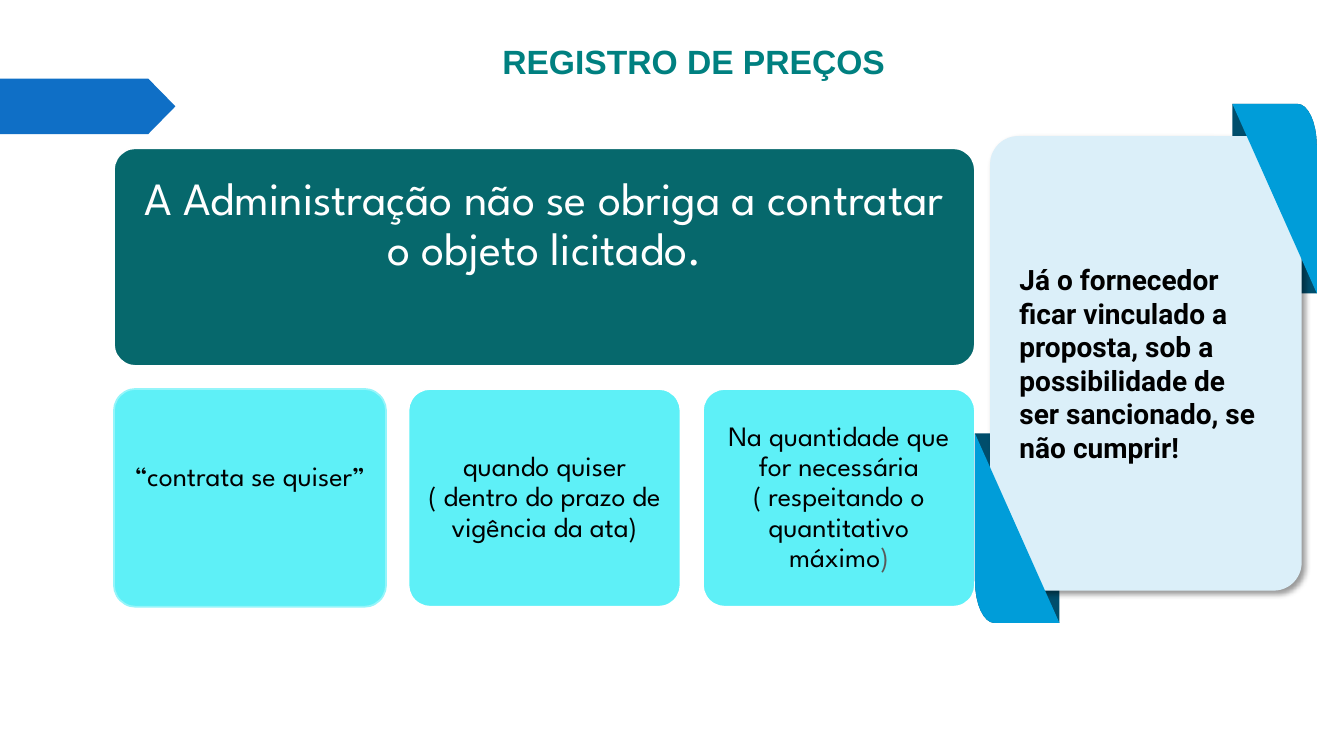
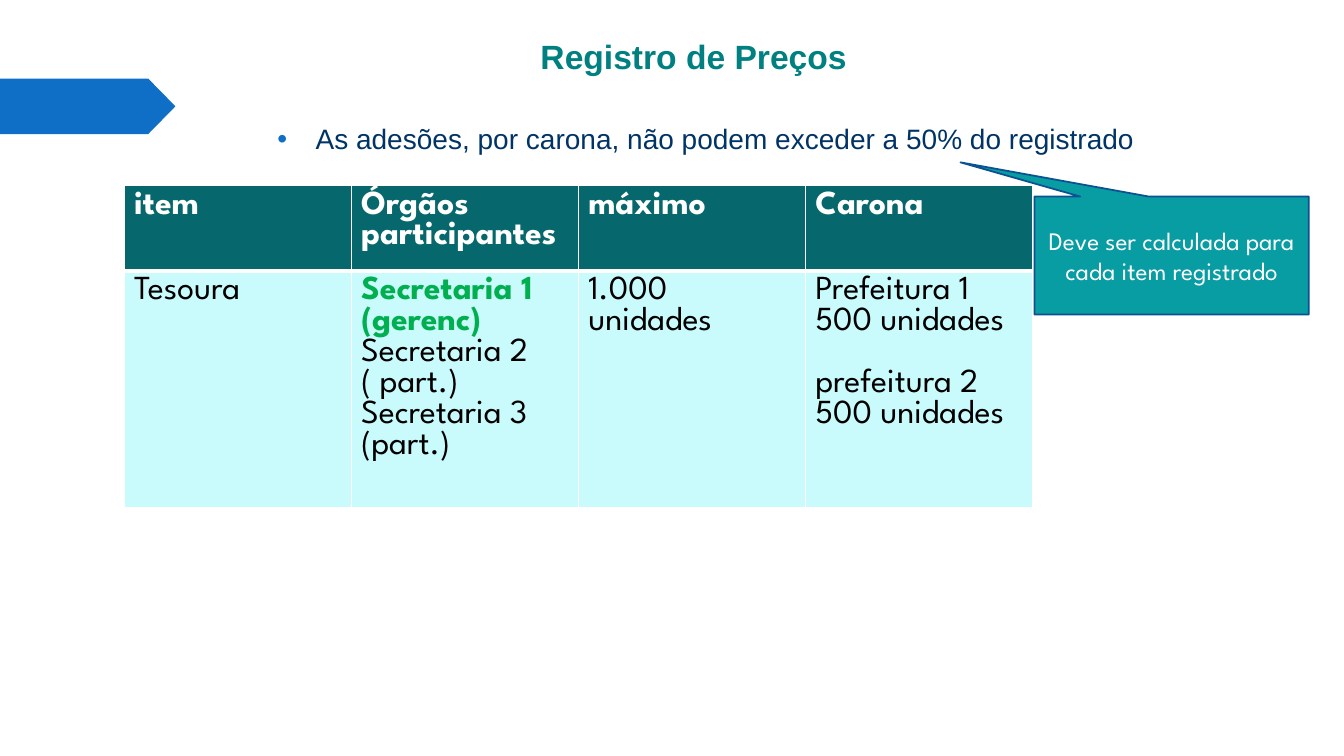
from collections import namedtuple
from math import cos, pi, sin

from lxml import etree
from pptx import Presentation
from pptx.dml.color import RGBColor
from pptx.enum.shapes import MSO_SHAPE
from pptx.enum.text import MSO_ANCHOR, PP_ALIGN
from pptx.oxml.ns import qn
from pptx.util import Inches, Pt

ROUNDED, CALLOUT, PENTAGON = (
    MSO_SHAPE.ROUNDED_RECTANGLE, MSO_SHAPE.RECTANGULAR_CALLOUT, MSO_SHAPE.PENTAGON)
MIDDLE, TOP = MSO_ANCHOR.MIDDLE, MSO_ANCHOR.TOP
CENTER, LEFT, JUSTIFY = PP_ALIGN.CENTER, PP_ALIGN.LEFT, PP_ALIGN.JUSTIFY

COLORS = {
    "white": "FFFFFF", "black": "000000", "band": "0F6FC6", "title": "008080",
    "navy": "003366", "teal": "06686C", "cyan": "5EF0F7", "cyan edge": "94F5FA",
    "pale cyan": "C9FAFC", "grey": "595959", "green": "00B050", "panel": "DBEFF9",
    "ribbon": "009DD9", "ribbon shade": "004E6C", "callout": "089CA3",
    "callout edge": "0B5292",
}
SANS, SPARTAN, ROBOTO = "Arial", "League Spartan", "Roboto"

Box = namedtuple("Box", "left top width height")
WIDTH, HEIGHT = 13.33, 7.5
BAND = Box(0, 0.78, 1.74, 0.55)
TITLE = Box(1.13, -0.12, 11.5, 1.45)
CARDS = Box(1.13, 1.47, 8.54, 4.55)
RIBBON_PANEL = Box(9.67, 1.03, 3.39, 5.15)
BULLETS = Box(2.65, 1.16, 9.75, 4.13)
TABLE = Box(1.23, 1.84, 9.01, 3.2)
NOTE = Box(10.26, 1.95, 2.72, 1.17)


def color(name):
    """Return the named palette colour."""
    return RGBColor.from_string(COLORS[name])


def emu(box):
    """Return the four lengths of a box for python-pptx."""
    return [Inches(length) for length in box]


def place(shape, box):
    """Move and size a shape to a box."""
    shape.left, shape.top, shape.width, shape.height = emu(box)


def style_font(font, name, size, ink, bold=False):
    """Set face, size, colour and weight."""
    font.name, font.size, font.bold = name, Pt(size), bold
    font.color.rgb = color(ink)


def paint(shape, fill, edge=None):
    """Give a shape a flat fill, an optional edge and no shadow."""
    shape.shadow.inherit = False
    shape.fill.solid()
    shape.fill.fore_color.rgb = color(fill)
    if edge:
        shape.line.color.rgb = color(edge)
        shape.line.width = Pt(1.25)
    else:
        shape.line.fill.background()


def add_block(page, kind, box, fill, edge=None, adjust=()):
    """Add a painted preset shape."""
    shape = page.shapes.add_shape(kind, *emu(box))
    paint(shape, fill, edge)
    for index, value in enumerate(adjust):
        shape.adjustments[index] = value
    return shape


def write(shape, text, font, align=CENTER, insets=(0.1, 0.05, 0.1, 0.05), spacing=1.0):
    """Write one wrapped paragraph in the middle of a shape."""
    frame = shape.text_frame
    frame.word_wrap = True
    frame.vertical_anchor = MIDDLE
    (frame.margin_left, frame.margin_top,
     frame.margin_right, frame.margin_bottom) = emu(insets)
    para = frame.paragraphs[0]
    para.text = text
    para.alignment = align
    para.line_spacing = spacing
    style_font(para.font, *font)
    return para


def add_band(deck, page):
    """Draw the side band and hand it to the slide master."""
    band = add_block(page, PENTAGON, BAND, "band", adjust=[0.49])
    band.element.xpath(".//p:cNvPr")[0].set("id", "90")
    deck.slide_master.shapes.element.append(band.element)


def set_title(page, text, bottom=0.05):
    """Place and style the title placeholder."""
    title = page.shapes.title
    place(title, TITLE)
    write(title, text, (SANS, 24, "title", True), insets=(0.1, 0.05, 0.1, bottom))


def add_cards(page, box):
    """Draw a wide heading card over three equal cards."""
    card_height, card_width = box.height * 0.475, box.width * 0.316
    step = (box.width - card_width) / 2
    heading = add_block(page, ROUNDED, box._replace(height=card_height),
                        "teal", "white", [0.1])
    write(heading, "A Administração não se obriga a contratar o objeto licitado.",
          (SPARTAN, 33, "white"), insets=(0.14, 0.14, 0.14, 0.76), spacing=0.9)
    cards = [
        ("“contrata se quiser”", "", "cyan edge", 0.48),
        ("quando quiser ( dentro do prazo de vigência da ata)", "", "white", 0.08),
        ("Na quantidade que for necessária ( respeitando o quantitativo máximo", ")",
         "white", 0.08),
    ]
    for index, (text, ending, edge, bottom) in enumerate(cards):
        spot = Box(box.left + index * step, box.top + box.height - card_height,
                   card_width, card_height)
        card = add_block(page, ROUNDED, spot, "cyan", edge, [0.1])
        para = write(card, text, (SPARTAN, 20, "black"),
                     insets=(0.08, 0.08, 0.08, bottom), spacing=0.9)
        if ending:
            span = para.add_run()
            span.text = ending
            span.font.color.rgb = color("grey")


def add_fold(page, box, fill, corners, turned):
    """Draw a ribbon end with one round corner, turned half round if asked."""
    arc = [(0.77 + 0.23 * sin(step * pi / 16), 0.22 - 0.22 * cos(step * pi / 16))
           for step in range(9)]
    shares = [(1 - x, 1 - y) if turned else (x, y) for x, y in arc + corners]
    points = [(Inches(box.left + x * box.width), Inches(box.top + y * box.height))
              for x, y in shares]
    builder = page.shapes.build_freeform(*points[0])
    builder.add_line_segments(points[1:], close=True)
    paint(builder.convert_to_shape(), fill)


def add_shadow(shape):
    """Add a soft shadow to the lower right."""
    effects = shape.element.spPr.find(qn("a:effectLst"))
    shadow = etree.SubElement(effects, qn("a:outerShdw"), blurRad=str(Pt(4)),
                              dist=str(Pt(3)), dir="2700000", algn="tl")
    ink = etree.SubElement(shadow, qn("a:srgbClr"), val=COLORS["black"])
    etree.SubElement(ink, qn("a:alpha"), val="40000")


def add_ribbon_panel(page, box):
    """Draw a text panel held by ribbons at two opposite corners."""
    fold_width, fold_height = box.width * 0.247, box.height * 0.365
    upper = Box(box.left + box.width - fold_width, box.top, fold_width, fold_height)
    lower = Box(box.left, box.top + box.height - fold_height, fold_width, fold_height)
    folds = [(upper, False), (lower, True)]
    for spot, turned in folds:
        add_fold(page, spot, "ribbon shade", [(1, 1), (0, 1), (0, 0)], turned)
    inner = Box(box.left + 0.15, box.top + 0.32, box.width - 0.3, box.height - 0.64)
    panel = add_block(page, ROUNDED, inner, "panel", adjust=[0.09])
    add_shadow(panel)
    write(panel, "Já o fornecedor ficar vinculado a proposta, sob a possibilidade "
          "de ser sancionado, se não cumprir!", (ROBOTO, 20, "black", True), LEFT,
          (0.21, 0.05, 0.3, 0.05))
    for spot, turned in folds:
        add_fold(page, spot, "ribbon", [(1, 1), (0, 0)], turned)


def set_bullet(page, box, text):
    """Fill the body placeholder with one bulleted line."""
    body = page.placeholders[1]
    place(body, box)
    para = write(body, text, (SANS, 20, "navy"), JUSTIFY)
    body.text_frame.vertical_anchor = TOP
    para.space_before = Pt(0)
    props = para._p.get_or_add_pPr()
    props.set("marL", str(Inches(0.38)))
    props.set("indent", str(-Inches(0.38)))
    bullet_color = etree.Element(qn("a:buClr"))
    etree.SubElement(bullet_color, qn("a:srgbClr"), val=COLORS["band"])
    bullet = etree.Element(qn("a:buChar"), char="•")
    default_font = props.find(qn("a:defRPr"))
    default_font.addprevious(bullet_color)
    default_font.addprevious(bullet)


def set_borders(cell, bottom):
    """Draw white cell borders, with a bottom line of its own width."""
    props = cell._tc.get_or_add_tcPr()
    for index, (side, width) in enumerate(
            [("lnL", 1), ("lnR", 1), ("lnT", 1), ("lnB", bottom)]):
        line = etree.Element(qn(f"a:{side}"), w=str(Pt(width)))
        fill = etree.SubElement(line, qn("a:solidFill"))
        etree.SubElement(fill, qn("a:srgbClr"), val=COLORS["white"])
        props.insert(index, line)


def add_quota_table(page, box):
    """Draw the table of items, bodies, maximum and riders."""
    rows = [
        ["item", "Órgãos participantes", "máximo", "Carona"],
        ["Tesoura",
         "Secretaria 1 (gerenc)\nSecretaria 2 ( part.)\nSecretaria 3 (part.)",
         "1.000 unidades",
         "Prefeitura 1\n500 unidades\nprefeitura 2\n500 unidades"],
    ]
    table = page.shapes.add_table(2, 4, *emu(box)).table
    for row, share in zip(table.rows, (0.265, 0.735)):
        row.height = Inches(box.height * share)
    looks = [("teal", "white", True, 3), ("pale cyan", "black", False, 1)]
    for row, texts, (fill, ink, bold, bottom) in zip(table.rows, rows, looks):
        for cell, text in zip(row.cells, texts):
            cell.text = text
            cell.fill.solid()
            cell.fill.fore_color.rgb = color(fill)
            set_borders(cell, bottom)
            for para in cell.text_frame.paragraphs:
                style_font(para.font, SPARTAN, 24, ink, bold)
    manager = table.cell(1, 1).text_frame.paragraphs[0]
    style_font(manager.font, SPARTAN, 24, "green", True)
    table.cell(1, 3).text_frame.paragraphs[2].space_before = Pt(22)


def add_note(page, box):
    """Draw the callout that points at the bulleted line."""
    note = add_block(page, CALLOUT, box, "callout", "callout edge", [-0.77, -0.79])
    write(note, "Deve ser calculada para cada item registrado", (SPARTAN, 18, "white"))


def build_duties(page):
    """Build the slide on the duties of each side."""
    set_title(page, "REGISTRO DE PREÇOS")
    add_cards(page, CARDS)
    add_ribbon_panel(page, RIBBON_PANEL)


def build_quotas(page):
    """Build the slide on the limit for riders."""
    set_title(page, "Registro de Preços", bottom=0.15)
    set_bullet(page, BULLETS,
               "As adesões, por carona, não podem exceder a 50% do registrado")
    add_quota_table(page, TABLE)
    add_note(page, NOTE)


def main():
    """Build and save the deck."""
    deck = Presentation()
    deck.slide_width, deck.slide_height = Inches(WIDTH), Inches(HEIGHT)
    duties = deck.slides.add_slide(deck.slide_layouts[5])
    add_band(deck, duties)
    build_duties(duties)
    build_quotas(deck.slides.add_slide(deck.slide_layouts[1]))
    deck.save("out.pptx")


if __name__ == "__main__":
    main()
